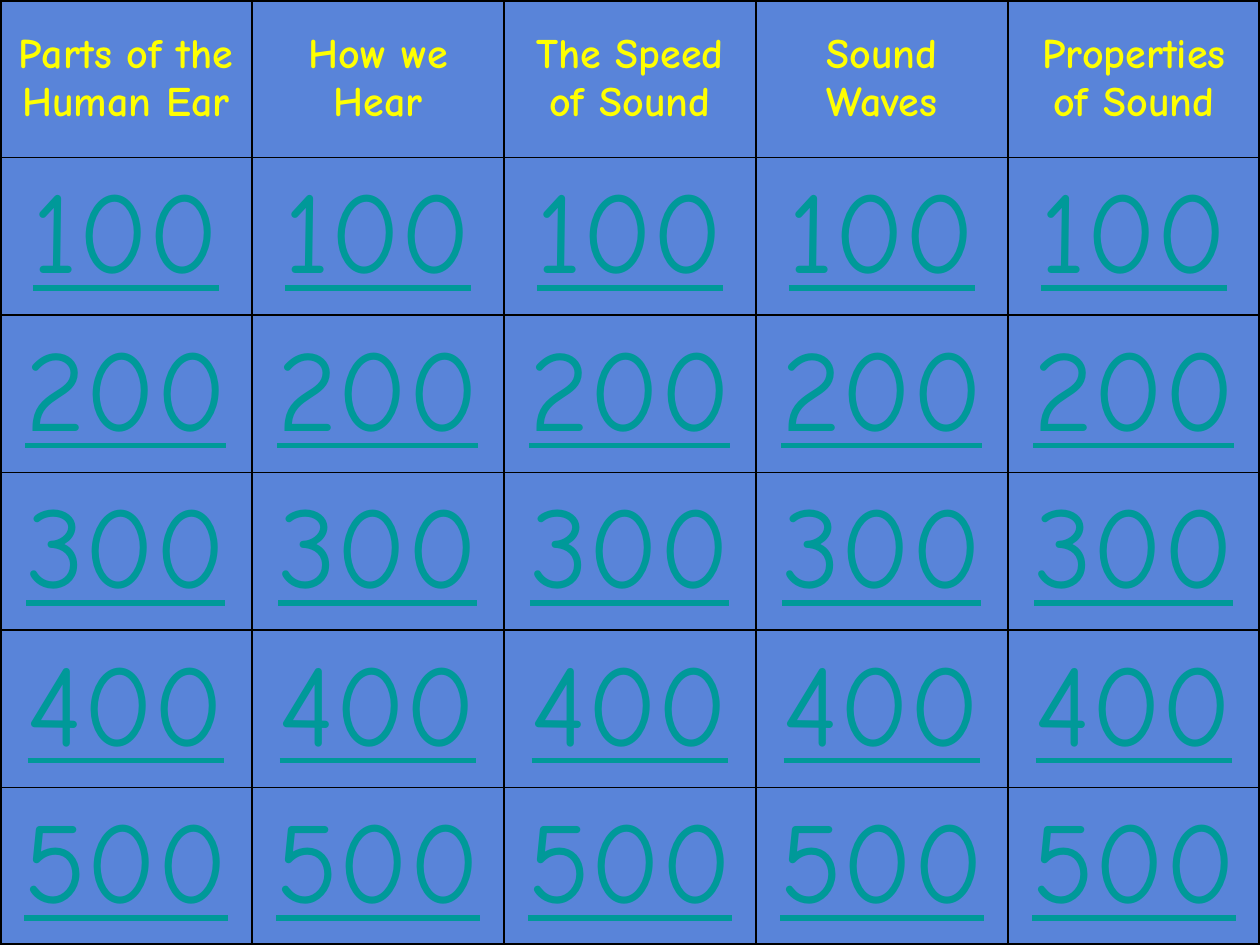
from lxml import etree
from pptx import Presentation
from pptx.dml.color import RGBColor
from pptx.enum.text import MSO_ANCHOR, PP_ALIGN
from pptx.oxml.ns import qn
from pptx.util import Emu, Pt

MIDDLE = MSO_ANCHOR.MIDDLE
CENTER = PP_ALIGN.CENTER

BLUE = RGBColor(0x59, 0x84, 0xD9)
YELLOW = RGBColor(0xFF, 0xFF, 0x00)
TEAL = RGBColor(0x00, 0x99, 0x99)
BLACK = RGBColor(0x00, 0x00, 0x00)

FONT = "Comic Neue"
SLIDE_W, SLIDE_H = 960, 720
CATEGORIES = ["Parts of the Human Ear", "How we Hear", "The Speed of Sound",
              "Sound Waves", "Properties of Sound"]
POINTS = ["100", "200", "300", "400", "500"]


def px(n):
    return Emu(n * 9525)


def add_border(cell, index, side, width):
    ln = etree.Element(qn(f"a:ln{side}"), w=str(Pt(width)))
    fill = etree.SubElement(ln, qn("a:solidFill"))
    etree.SubElement(fill, qn("a:srgbClr"), val=str(BLACK))
    cell._tc.get_or_add_tcPr().insert(index, ln)


def set_space_before(p, percent):
    spacing = etree.SubElement(p._p.get_or_add_pPr(), qn("a:spcBef"))
    etree.SubElement(spacing, qn("a:spcPct"), val=str(percent * 1000))


def fill_cell(cell, text, size, color, bold=False, underline=False):
    cell.fill.solid()
    cell.fill.fore_color.rgb = BLUE
    cell.vertical_anchor = MIDDLE
    p = cell.text_frame.paragraphs[0]
    p.alignment = CENTER
    set_space_before(p, 20)
    r = p.add_run()
    r.text = text
    r.font.name = FONT
    r.font.size = Pt(size)
    r.font.bold = bold
    r.font.underline = underline
    r.font.color.rgb = color


def add_board(s):
    rows, cols = len(POINTS) + 1, len(CATEGORIES)
    table = s.shapes.add_table(rows, cols, 0, 0, px(SLIDE_W), px(SLIDE_H)).table
    table.horz_banding = False
    table.first_row = False
    for row in range(rows):
        for col in range(cols):
            cell = table.cell(row, col)
            if row == 0:
                fill_cell(cell, CATEGORIES[col], 24, YELLOW, bold=True)
            else:
                fill_cell(cell, POINTS[row - 1], 66, TEAL, underline=True)
            outer = {"L": col == 0, "R": col == cols - 1,
                     "T": row == 0, "B": row == rows - 1}
            for index, (side, on_edge) in enumerate(outer.items()):
                add_border(cell, index, side, 2.25 if on_edge else 1)


def main():
    prs = Presentation()
    prs.slide_width, prs.slide_height = px(SLIDE_W), px(SLIDE_H)
    s = prs.slides.add_slide(prs.slide_layouts[6])
    s.background.fill.solid()
    s.background.fill.fore_color.rgb = BLUE
    add_board(s)
    prs.save("out.pptx")


if __name__ == "__main__":
    main()
